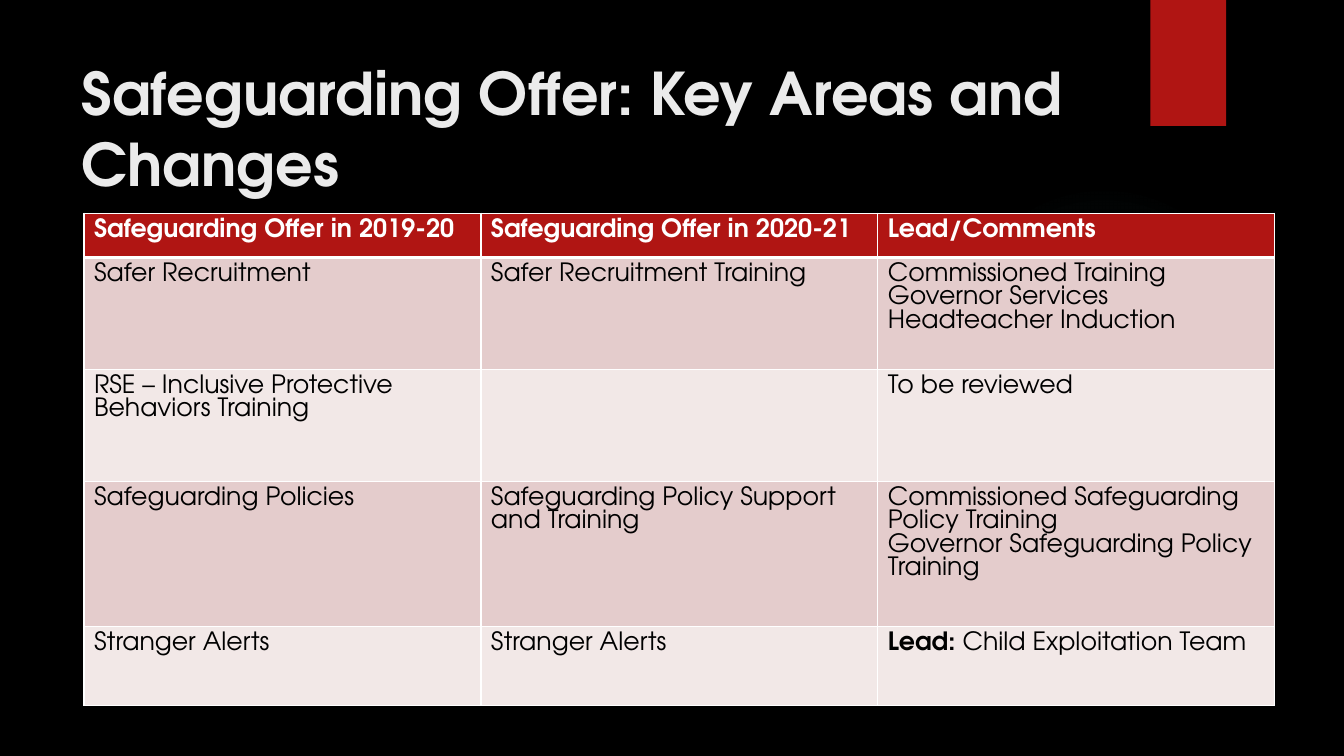
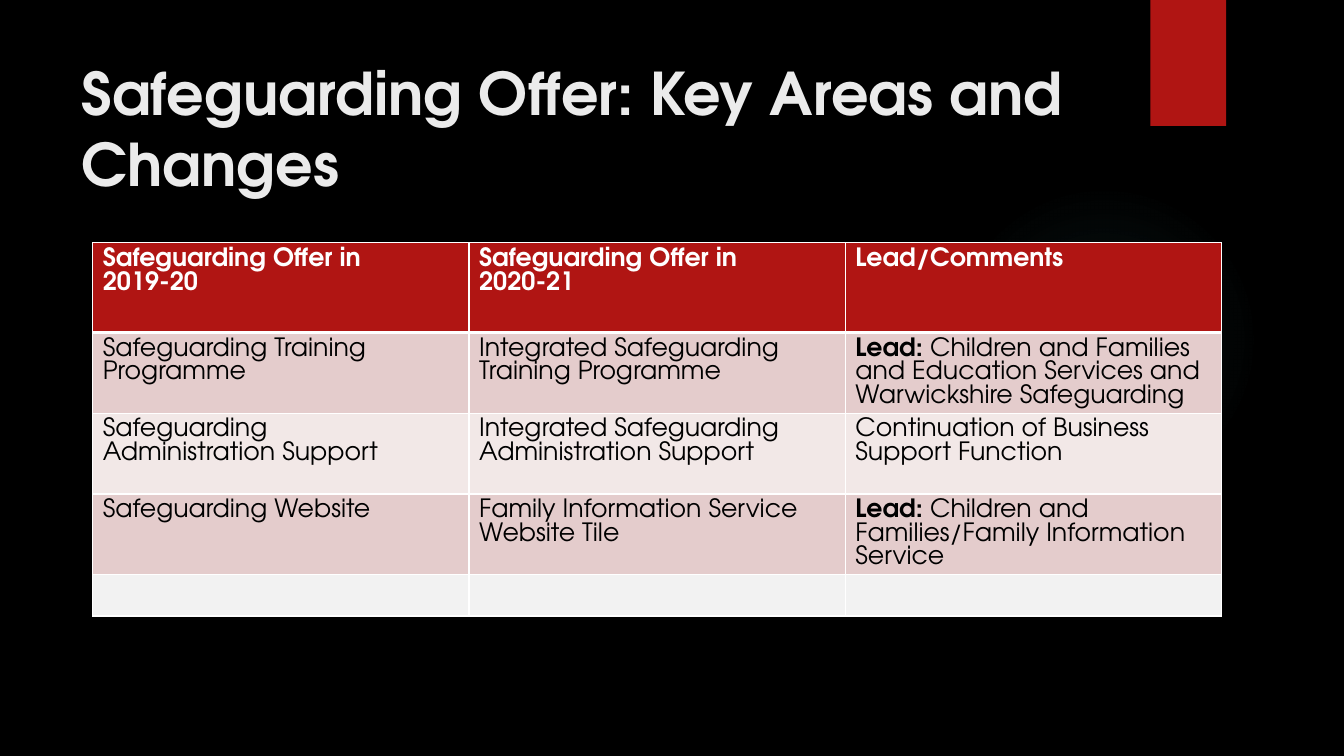
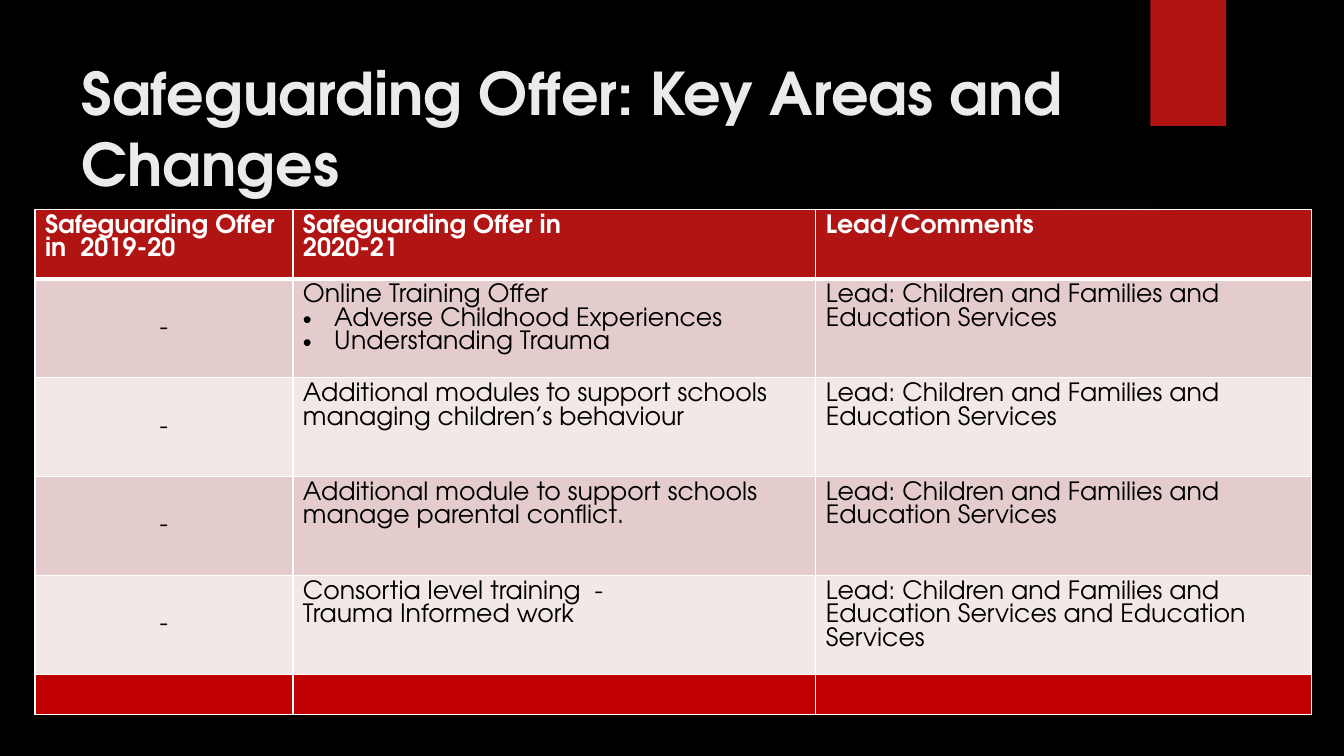
from dataclasses import dataclass
from itertools import product
from lxml.etree import SubElement as Sub
from pptx import Presentation
from pptx.dml.color import RGBColor as Rgb
from pptx.enum.shapes import MSO_SHAPE as Kind
from pptx.enum.text import MSO_ANCHOR as Anchor, PP_ALIGN as Align
from pptx.oxml import parse_xml
from pptx.oxml.ns import nsdecls, qn
from pptx.util import Inches, Pt


@dataclass(frozen=True)
class Theme:
    font: str = "TeX Gyre Adventor"
    back: str = "000000"
    ink: str = "000000"
    light: str = "EBEBEB"
    white: str = "FFFFFF"
    red: str = "B01513"
    deep: str = "C00000"
    pale: str = "F2F2F2"
    glow: str = "50B9C1"
    bands: tuple = ("E4CCCC", "F2E8E7")
    head: float = 42
    head_lead: float = 50.7
    body: float = 18
    lead: float = 16.8
    rule: float = 1
    thick: float = 3


THEME = Theme()
WIDE, HIGH = Inches(13.33), Inches(7.5)
TITLE = "Safeguarding Offer: Key Areas and Changes"
FAMILY = "Lead: Children and Families and Education Services"


def place(left, top, width, height):
    sides = (WIDE, HIGH, WIDE, HIGH)
    return [int(side * share / 100) for side, share in zip(sides, (left, top, width, height))]


def split(total, parts):
    return [int(total * part / sum(parts)) for part in parts]


def write(para, text, size, color, bold=False):
    run = para.add_run()
    run.text = text
    font = run.font
    font.name, font.size, font.bold = THEME.font, Pt(size), bold
    font.color.rgb = Rgb.from_string(color)


def add_block(slide, kind, box):
    block = slide.shapes.add_shape(kind, *place(*box))
    block.shadow.inherit = False
    block.line.fill.background()
    return block


def add_glow(slide, box):
    orb = add_block(slide, Kind.OVAL, box)
    stops = "".join(
        f'<a:gs pos="{spot * 1000}"><a:srgbClr val="{THEME.glow}">'
        f'<a:alpha val="{alpha * 1000}"/></a:srgbClr></a:gs>'
        for spot, alpha in ((0, 7), (36, 6), (69, 0)))
    fill = parse_xml(
        f'<a:gradFill {nsdecls("a")}><a:gsLst>{stops}</a:gsLst><a:path path="circle">'
        '<a:fillToRect l="50000" t="50000" r="50000" b="50000"/></a:path></a:gradFill>')
    orb._element.spPr.find(qn("a:prstGeom")).addnext(fill)


def add_flag(slide, box):
    flag = add_block(slide, Kind.RECTANGLE, box)
    flag.fill.solid()
    flag.fill.fore_color.rgb = Rgb.from_string(THEME.red)


def add_title(slide, box):
    frame = slide.shapes.add_textbox(*place(*box)).text_frame
    frame.word_wrap = True
    frame.vertical_anchor = Anchor.MIDDLE
    para = frame.paragraphs[0]
    para.line_spacing = Pt(THEME.head_lead)
    write(para, TITLE, THEME.head, THEME.light, True)


def add_edges(cell, row):
    props = cell._tc.get_or_add_tcPr()
    heavy = {(0, "lnB"), (1, "lnT")}
    for side in ("lnL", "lnR", "lnT", "lnB"):
        width = THEME.thick if (row, side) in heavy else THEME.rule
        line = Sub(props, qn(f"a:{side}"), w=str(Pt(width)))
        Sub(Sub(line, qn("a:solidFill")), qn("a:srgbClr"), val=THEME.white)


def add_bullet(para):
    props = para._p.get_or_add_pPr()
    indent = Inches(0.31)
    props.set("marL", str(indent))
    props.set("indent", str(-indent))
    Sub(props, qn("a:buFont"), typeface="Arial")
    Sub(props, qn("a:buChar"), char="•")


def fill_cell(cell, row, lines, color):
    add_edges(cell, row)
    cell.fill.solid()
    cell.fill.fore_color.rgb = Rgb.from_string(color)
    frame = cell.text_frame
    for at, line in enumerate(lines or [""]):
        para = frame.add_paragraph() if at else frame.paragraphs[0]
        para.line_spacing = Pt(THEME.lead)
        if line == "-":
            para.alignment = Align.CENTER
            cell.vertical_anchor = Anchor.MIDDLE
        if line.startswith("•"):
            add_bullet(para)
        strong, mark, plain = line.removeprefix("•").rpartition("|")
        for text, bold in ((strong, True), (plain, row == 0)):
            if text:
                write(para, text, THEME.body, THEME.ink if row else THEME.white, bold)


def add_grid(slide, box, cols, rows, cells, last=None):
    left, top, width, height = place(*box)
    shape = slide.shapes.add_table(len(rows), len(cols), left, top, width, height)
    table = shape.table
    table.first_row = table.horz_banding = False
    for col, size in zip(table.columns, split(width, cols)):
        col.width = size
    for row, size in zip(table.rows, split(height, rows)):
        row.height = size
    colors = [THEME.red] + [THEME.bands[at % 2] for at in range(len(rows) - 1)]
    if last:
        colors[-1] = last
    for row, col in product(range(len(rows)), range(len(cols))):
        lines = cells[row][col] if row < len(cells) else []
        fill_cell(table.cell(row, col), row, lines, colors[row])


def add_page(deck, grid):
    slide = deck.slides.add_slide(deck.slide_layouts[6])
    add_glow(slide, (70.6, 24.4, 23.1, 41.07))
    add_flag(slide, (85.6, 0, 5.63, 16.67))
    add_title(slide, (5.33, 6.67, 77.2, 20.4))
    add_grid(slide, **grid)


AREAS = dict(
    box=(6.25, 28.2, 88.6, 65.1), cols=(1, 1, 1), rows=(0.44, 1.11, 1.11, 1.44, 0.78),
    cells=[
        [["Safeguarding Offer in 2019-20"], ["Safeguarding Offer in 2020-21"], ["Lead/Comments"]],
        [["Safer Recruitment"], ["Safer Recruitment Training"],
         ["Commissioned Training", "Governor Services", "Headteacher Induction"]],
        [["RSE – Inclusive Protective Behaviors Training"], [], ["To be reviewed"]],
        [["Safeguarding Policies"], ["Safeguarding Policy Support and Training"],
         ["Commissioned Safeguarding Policy Training", "Governor Safeguarding Policy Training"]],
        [["Stranger Alerts"], ["Stranger Alerts"], ["Lead: |Child Exploitation Team"]],
    ])

SUPPORT = dict(
    box=(6.9, 32.1, 84, 49.4), cols=(1, 1, 1), rows=(0.89, 0.8, 0.8, 0.8, 0.41),
    last=THEME.pale,
    cells=[
        [["Safeguarding Offer in", "2019-20"], ["Safeguarding Offer in", "2020-21"],
         ["Lead/Comments"]],
        [["Safeguarding Training Programme"], ["Integrated Safeguarding Training Programme"],
         ["Lead: |Children and Families and Education Services and Warwickshire Safeguarding"]],
        [["Safeguarding", "Administration Support"],
         ["Integrated Safeguarding Administration Support"],
         ["Continuation of Business Support Function"]],
        [["Safeguarding Website"], ["Family Information Service Website Tile"],
         ["Lead: |Children and Families/Family Information Service"]],
    ])

TRAINING = dict(
    box=(2.6, 27.7, 95, 66.7), cols=(2.56, 5.19, 4.92),
    rows=(0.69, 0.98, 0.98, 0.98, 0.98, 0.39), last=THEME.deep,
    cells=[
        [["Safeguarding Offer in  2019-20"], ["Safeguarding Offer in", "2020-21"],
         ["Lead/Comments"]],
        [["-"], ["Online Training Offer", "•Adverse Childhood Experiences",
                 "•Understanding Trauma"], [FAMILY]],
        [["-"], ["Additional modules to support schools managing children’s behaviour"], [FAMILY]],
        [["-"], ["Additional module to support schools manage parental conflict."], [FAMILY]],
        [["-"], ["Consortia level training  -", "Trauma Informed work"],
         ["Lead: Children and Families and Education Services and Education Services"]],
    ])


def main():
    deck = Presentation()
    deck.slide_width, deck.slide_height = WIDE, HIGH
    back = deck.slide_master.background.fill
    back.solid()
    back.fore_color.rgb = Rgb.from_string(THEME.back)
    for grid in (AREAS, SUPPORT, TRAINING):
        add_page(deck, grid)
    deck.save("out.pptx")


if __name__ == "__main__":
    main()
